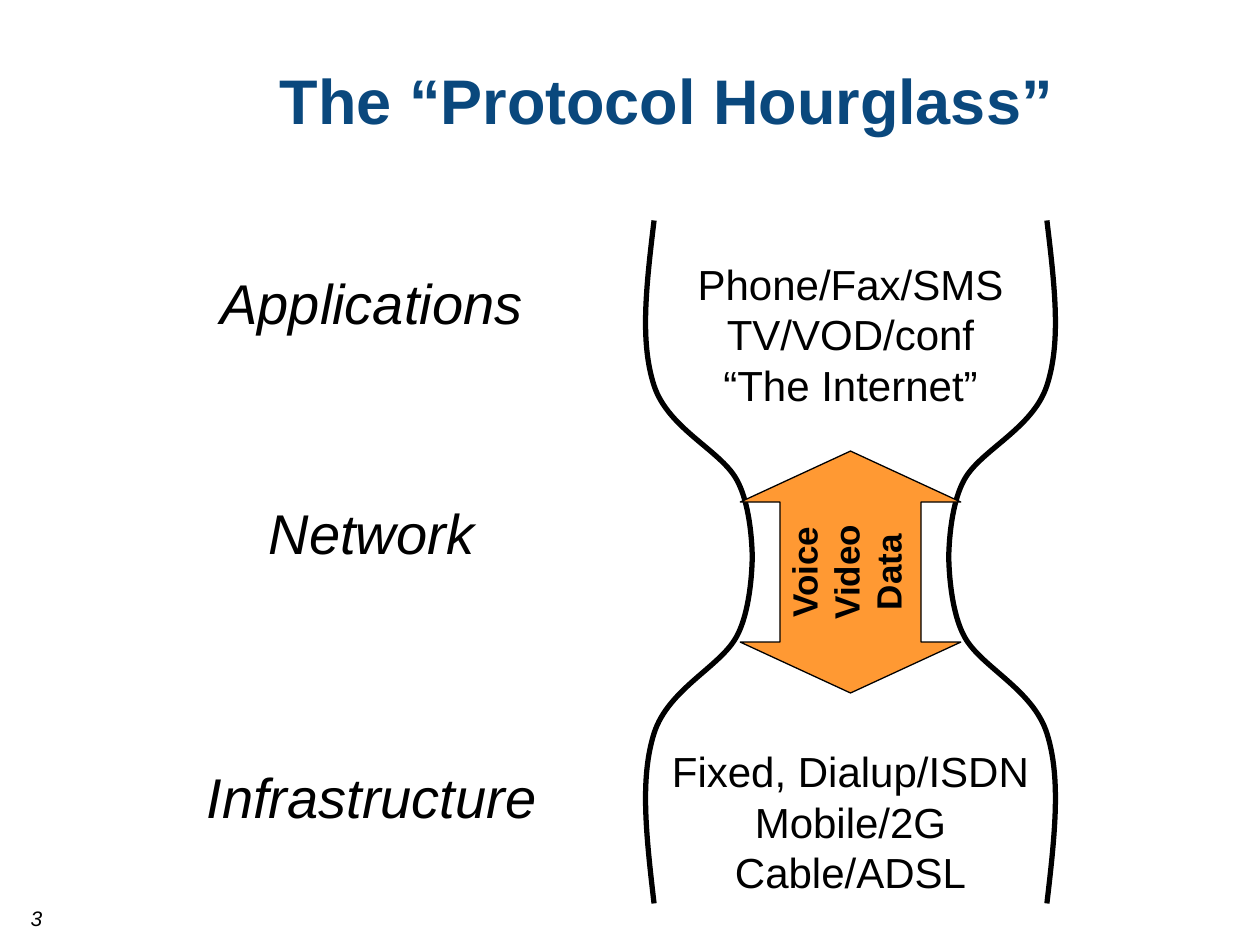
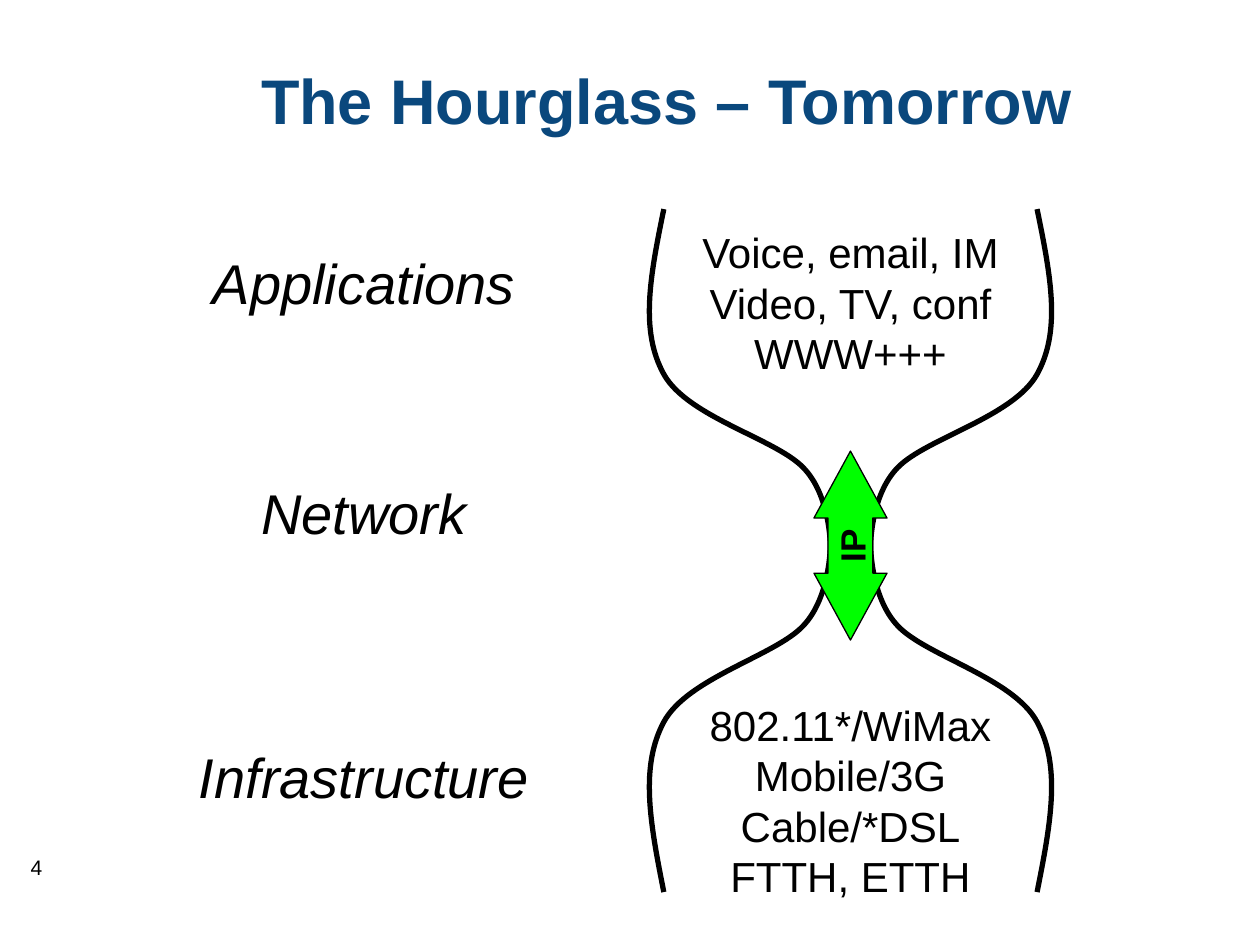
from lxml import etree
from pptx import Presentation
from pptx.dml.color import RGBColor
from pptx.enum.shapes import MSO_SHAPE
from pptx.enum.text import MSO_ANCHOR, MSO_AUTO_SIZE, PP_ALIGN
from pptx.oxml.ns import qn
from pptx.util import Inches, Pt

ARROW = MSO_SHAPE.LEFT_RIGHT_ARROW
TOP, MIDDLE = MSO_ANCHOR.TOP, MSO_ANCHOR.MIDDLE
FIXED, GROW = MSO_AUTO_SIZE.NONE, MSO_AUTO_SIZE.SHAPE_TO_FIT_TEXT
CENTER = PP_ALIGN.CENTER

HUES = {"title": "0A487D", "ink": "000000", "today": "FF9933", "next": "00FF00"}
FONT = "Arial"

# Hourglass: axis, half width of the bulb, heights of its two halves
AXIS, BULB, UPPER, LOWER = 6.75, 1.67, 2.67, 2.75
# Bezier points from rim to waist, as shares of a quarter's width and height
CURVE = [(0.125, 0), (0.05, 0.206), (0, 0.363), (0.125, 0.491), (0.25, 0.618),
         (0.71, 0.682), (0.857, 0.768), (1, 0.85), (1, 1), (1, 1)]
# Layer names: text, width, drop below the first
APPS = ("Applications", 2.73, 0)
NET = ("Network", 1.96, 1.83)
INFRA = ("Infrastructure", 2.95, 3.92)

SLIDES = [
    {"title": "The “Protocol Hourglass”", "num": "3", "num_y": 7.08, "slant": True,
     "waist": 4.42, "neck": 0.78, "label_x": 2.95, "label_y": 2.08,
     "texts": [(APPS, ["Phone/Fax/SMS", "TV/VOD/conf", "“The Internet”"],
                2.65, 2, 1.31),
               (INFRA, ["Fixed, Dialup/ISDN", "Mobile/2G", "Cable/ADSL"],
                3.06, 5.87, 1.31)],
     "flow": ["Voice", "Video", "Data"], "hue": "today",
     "arrow": (1.92, 1.75, 4.54), "adj": (0.64, 0.231)},
    {"title": "The Hourglass – Tomorrow", "num": "4", "num_y": 6.67, "slant": False,
     "waist": 4.33, "neck": 0.16, "label_x": 2.89, "label_y": 1.92,
     "texts": [(APPS, ["Voice, email, IM", "Video, TV, conf", "WWW+++"],
                2.58, 1.75, 1.31),
               (INFRA, ["802.11*/WiMax", "Mobile/3G", "Cable/*DSL", "FTTH, ETTH"],
                2.46, 5.5, 1.72)],
     "flow": ["IP"], "hue": "next",
     "arrow": (1.5, 0.58, 4.33), "adj": (0.612, 0.916)},
]


def write(frame, lines, size, hue="ink", bold=False, italic=False):
    frame.text = "\n".join(lines)
    for para in frame.paragraphs:
        para.alignment = CENTER
        for run in para.runs:
            font = run.font
            font.name, font.size = FONT, Pt(size)
            font.bold, font.italic = bold, italic
            font.color.rgb = RGBColor.from_string(HUES[hue])


def add_text(host, mid, top, width, height, lines, size, italic=False):
    box = host.shapes.add_textbox(Inches(mid - width / 2), Inches(top),
                                  Inches(width), Inches(height))
    frame = box.text_frame
    write(frame, lines, size, italic=italic)
    frame.word_wrap = False
    frame.auto_size = GROW
    return frame


deck = Presentation()
deck.slide_width, deck.slide_height = Inches(10), Inches(7.5)

for page in SLIDES:
    slide = deck.slides.add_slide(deck.slide_layouts[5])

    # Title and page number
    title = slide.shapes.title
    title.left, title.top = Inches(0.83), Inches(0.16)
    title.width, title.height = Inches(8.92), Inches(1.25)
    write(title.text_frame, [page["title"]], 36, "title", bold=True)
    title.text_frame.vertical_anchor = MIDDLE
    title.text_frame.auto_size = FIXED
    num = add_text(slide, 0.29, page["num_y"], 0.58, 0.42, [page["num"]], 12,
                   page["slant"])
    num.auto_size = FIXED
    num.word_wrap = True
    num.vertical_anchor = MIDDLE

    # Hourglass outline, one curve per quarter
    glass = slide.shapes.add_group_shape()
    span = BULB - page["neck"]
    for side in (-1, 1):
        for rise in (-UPPER, LOWER):
            dots = [(Inches(AXIS + side * (BULB - fx * span)),
                     Inches(page["waist"] + rise * (1 - fy))) for fx, fy in CURVE]
            pen = glass.shapes.build_freeform(*dots[0])
            pen.add_line_segments(dots[1:], close=False)
            curve = pen.convert_to_shape()
            # Join every three straight pieces into one Bezier piece
            legs = list(curve._element.iter(qn("a:lnTo")))
            for i in range(0, len(legs), 3):
                bend = etree.Element(qn("a:cubicBezTo"))
                legs[i].addprevious(bend)
                for leg in legs[i:i + 3]:
                    bend.append(leg[0])
                    leg.getparent().remove(leg)
            curve.shadow.inherit = False
            curve.fill.background()
            curve.line.color.rgb = RGBColor.from_string(HUES["ink"])
            curve.line.width = Pt(3)

    # Contents of the two bulbs, each with its layer name
    for (name, wide, drop), lines, width, top, height in page["texts"]:
        layer = slide.shapes.add_group_shape()
        add_text(layer, AXIS, top, width, height, lines, 24)
        add_text(layer, page["label_x"], page["label_y"] + drop, wide, 0.64,
                 [name], 32, True)

    # Upright arrow through the neck, with its layer name
    layer = slide.shapes.add_group_shape()
    long, wide, mid = page["arrow"]
    arrow = layer.shapes.add_shape(ARROW, Inches(AXIS - long / 2),
                                   Inches(mid - wide / 2), Inches(long), Inches(wide))
    arrow.rotation = 270
    arrow.adjustments[0], arrow.adjustments[1] = page["adj"]
    arrow.shadow.inherit = False
    arrow.fill.solid()
    arrow.fill.fore_color.rgb = RGBColor.from_string(HUES[page["hue"]])
    arrow.line.color.rgb = RGBColor.from_string(HUES["ink"])
    arrow.line.width = Pt(0.75)
    frame = arrow.text_frame
    write(frame, page["flow"], 20, bold=True)
    frame.vertical_anchor = TOP
    frame.margin_left = frame.margin_right = frame.margin_bottom = 0
    frame.margin_top = Inches(0.02)
    name, wide, drop = NET
    add_text(layer, page["label_x"], page["label_y"] + drop, wide, 0.64,
             [name], 32, True)

deck.save("out.pptx")
